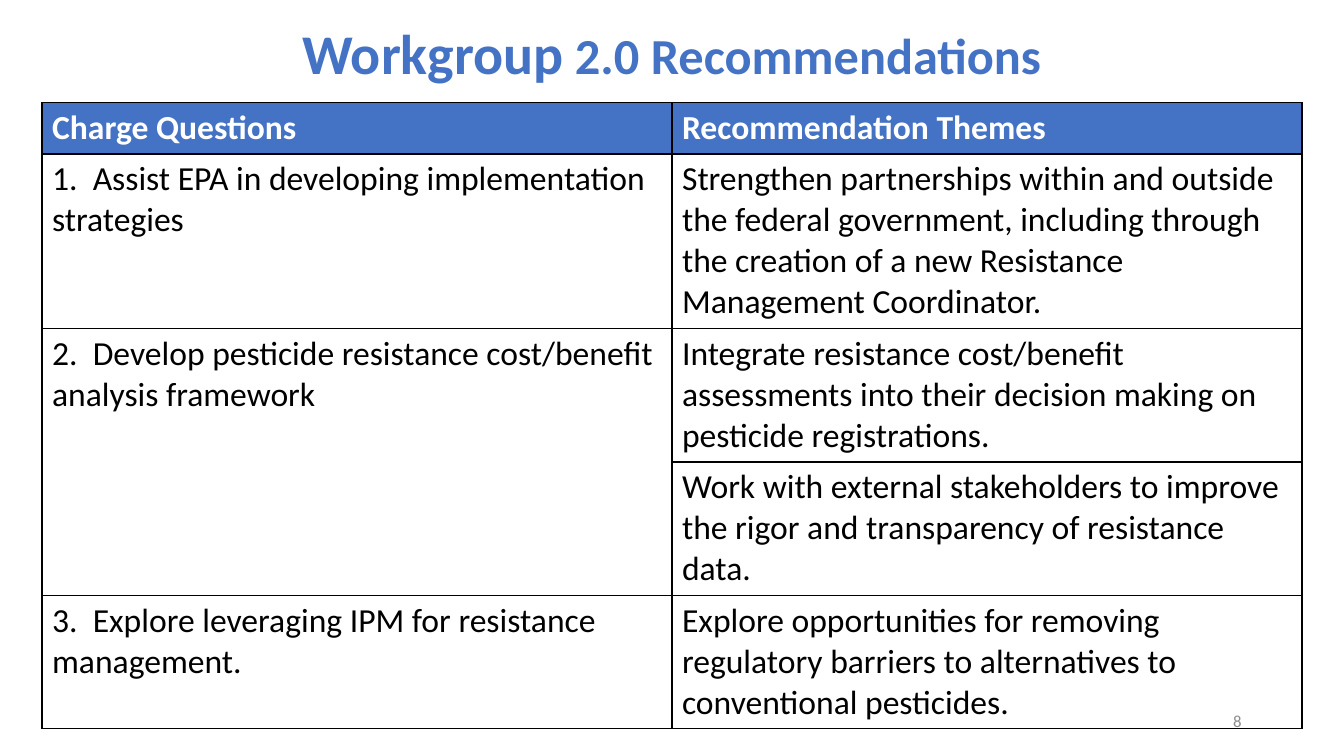
from lxml import etree
from pptx import Presentation
from pptx.dml.color import RGBColor
from pptx.enum.text import MSO_ANCHOR, PP_ALIGN
from pptx.oxml.ns import qn
from pptx.util import Cm, Pt

CENTER, RIGHT = PP_ALIGN.CENTER, PP_ALIGN.RIGHT
MIDDLE = MSO_ANCHOR.MIDDLE
FONT = "Calibri"
BLUE, WHITE, BLACK, GRAY = "4472C4", "FFFFFF", "000000", "8C8C8C"

TITLE = [("Workgroup", 40), (" 2.0 Recommendations", 36)]
PAGE_NUMBER = [("8", 12)]
HEADINGS = ("Charge Questions", "Recommendation Themes")
CHARGES = [
    ("1.  Assist EPA in developing implementation strategies", [
        "Strengthen partnerships within and outside the federal government, "
        "including through the creation of a new Resistance Management Coordinator.",
    ]),
    ("2.  Develop pesticide resistance cost/benefit analysis framework", [
        "Integrate resistance cost/benefit assessments into their decision making "
        "on pesticide registrations.",
        "Work with external stakeholders to improve the rigor and transparency "
        "of resistance data.",
    ]),
    ("3.  Explore leveraging IPM for resistance management.", [
        "Explore opportunities for removing regulatory barriers to alternatives "
        "to conventional pesticides.",
    ]),
]
ROW_HEIGHTS = (1.29, 4.4, 3.36, 3.36, 3.36)
LEFT, WIDTH = 1.06, 31.75


def color(hex_value):
    return RGBColor.from_string(hex_value)


def style(font, hex_value, bold=False):
    font.name = FONT
    font.bold = bold
    font.color.rgb = color(hex_value)


def add_line(slide, box, pieces, hex_value, align, bold=False):
    frame = slide.shapes.add_textbox(*map(Cm, box)).text_frame
    frame.word_wrap = True
    frame.vertical_anchor = MIDDLE
    line = frame.paragraphs[0]
    line.alignment = align
    style(line.font, hex_value, bold)
    for words, size in pieces:
        run = line.add_run()
        run.text = words
        run.font.size = Pt(size)


def add_borders(cell):
    properties = cell._tc.get_or_add_tcPr()
    for position, side in enumerate(("lnL", "lnR", "lnT", "lnB")):
        border = etree.Element(qn(f"a:{side}"), w=str(Pt(1)))
        fill = etree.SubElement(border, qn("a:solidFill"))
        etree.SubElement(fill, qn("a:srgbClr"), val=BLACK)
        properties.insert(position, border)


def fill_cell(cell, words, heading=False):
    cell.text = words
    font = cell.text_frame.paragraphs[0].font
    font.size = Pt(24)
    style(font, WHITE if heading else BLACK, heading)
    if heading:
        cell.fill.solid()
        cell.fill.fore_color.rgb = color(BLUE)
    else:
        cell.fill.background()


def add_recommendations(slide):
    frame = slide.shapes.add_table(
        len(ROW_HEIGHTS), len(HEADINGS),
        Cm(LEFT), Cm(2.59), Cm(WIDTH), Cm(sum(ROW_HEIGHTS)))
    table = frame.table
    table.horz_banding = False
    for column in table.columns:
        column.width = Cm(WIDTH / len(HEADINGS))
    for row, height in zip(table.rows, ROW_HEIGHTS):
        row.height = Cm(height)
    for index, heading in enumerate(HEADINGS):
        fill_cell(table.cell(0, index), heading, heading=True)

    first = 1
    for question, themes in CHARGES:
        last = first + len(themes) - 1
        for offset, theme in enumerate(themes):
            fill_cell(table.cell(first + offset, 0), question if offset == 0 else "")
            fill_cell(table.cell(first + offset, 1), theme)
        if last > first:
            table.cell(first, 0).merge(table.cell(last, 0))
        first = last + 1
    for cell in table.iter_cells():
        add_borders(cell)


def main():
    deck = Presentation()
    deck.slide_width, deck.slide_height = Cm(33.87), Cm(19.05)
    slide = deck.slides.add_slide(deck.slide_layouts[6])
    add_line(slide, (LEFT, 0.05, WIDTH, 2.54), TITLE, BLUE, CENTER, bold=True)
    add_line(slide, (23.92, 17.66, 7.62, 1.01), PAGE_NUMBER, GRAY, RIGHT)
    add_recommendations(slide)
    deck.save("out.pptx")


if __name__ == "__main__":
    main()
